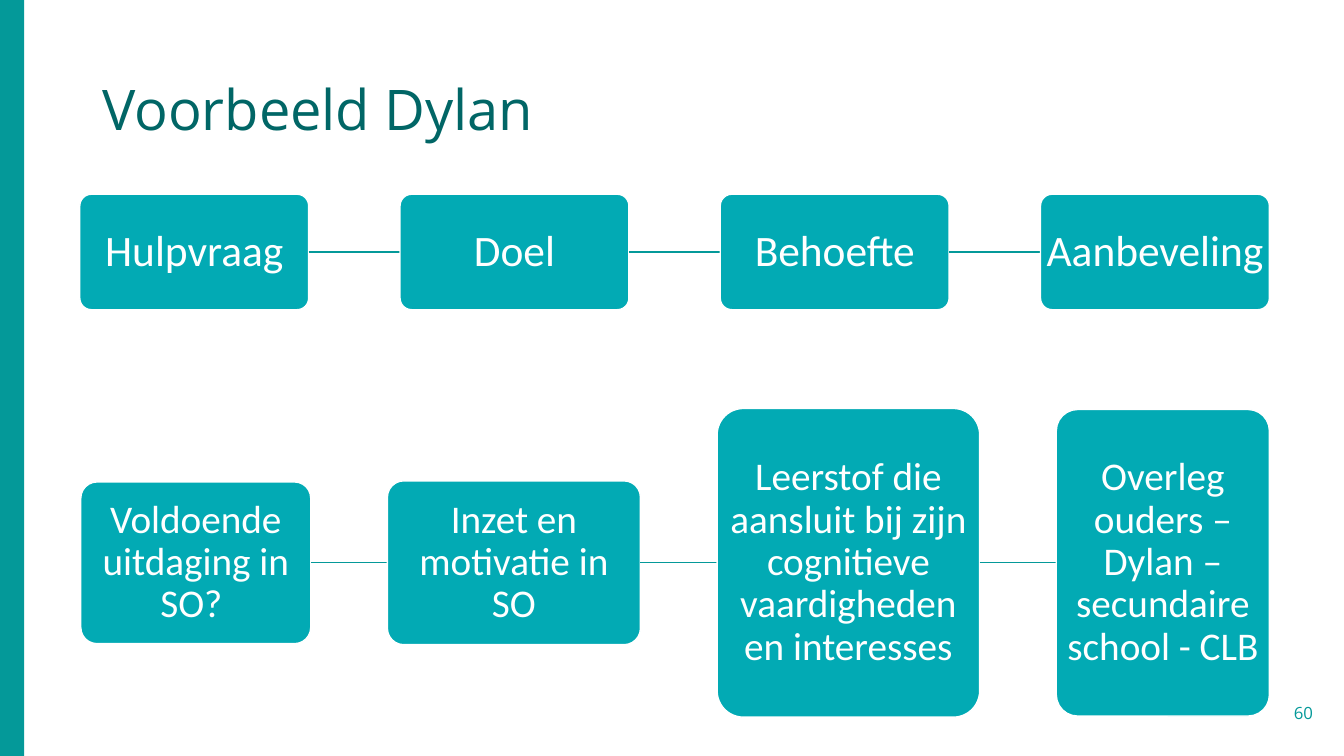
import pptx
import pptx.dml.color
import pptx.enum.shapes
import pptx.enum.text
import pptx.oxml
import pptx.oxml.ns
import pptx.util

PX = 9525
TEAL, DARK_TEAL, AQUA, WHITE = "049999", "016666", "02AAB4", "FFFFFF"
ALIGN = pptx.enum.text.PP_ALIGN
SHAPES = pptx.enum.shapes.MSO_SHAPE


def color(value):
    return pptx.dml.color.RGBColor.from_string(value)


def write(shape, text, size, font, shade, align, spacing=1.0):
    """Fill a shape with one vertically centred paragraph."""
    frame = shape.text_frame
    frame.word_wrap = True
    frame.vertical_anchor = pptx.enum.text.MSO_ANCHOR.MIDDLE
    para = frame.paragraphs[0]
    para.alignment = align
    para.line_spacing = spacing
    span = para.add_run()
    span.text = text
    formats = {"size": pptx.util.Pt(size), "name": font}
    for name, value in formats.items():
        setattr(span.font, name, value)
    span.font.color.rgb = color(shade)


deck = pptx.Presentation()
deck.slide_width = 1280 * PX
deck.slide_height = 720 * PX
page = deck.slides.add_slide(deck.slide_layouts[6])

side_bar = page.shapes.add_shape(SHAPES.RECTANGLE, 0, 0, 23 * PX, 720 * PX)
side_bar.shadow.inherit = False
side_bar.fill.solid()
side_bar.fill.fore_color.rgb = color(TEAL)
side_bar.line.fill.background()

title = page.shapes.add_textbox(88 * PX, 38 * PX, 1104 * PX, 139 * PX)
write(title, "Voorbeeld Dylan", 40, "Open Sans", DARK_TEAL, ALIGN.LEFT, 0.9)

page_number = page.shapes.add_textbox(1177 * PX, 660 * PX, 83 * PX, 38 * PX)
write(page_number, "60", 12, "Open Sans", TEAL, ALIGN.RIGHT)

# Each row: left edge, gap between boxes, centre line, text size, (text, width, height)
rows = [
    (76, 87, 240, 31, [
        ("Hulpvraag", 218, 110),
        ("Doel", 218, 110),
        ("Behoefte", 218, 110),
        ("Aanbeveling ", 218, 110),
    ]),
    (77, 73, 536, 28, [
        ("Voldoende uitdaging in SO? ", 219, 154),
        ("Inzet en motivatie in SO", 241, 156),
        ("Leerstof die aansluit bij zijn cognitieve vaardigheden en interesses", 250, 294),
        ("Overleg ouders – Dylan – secundaire school - CLB", 203, 292),
    ]),
]

for row_left, gap, middle, size, steps in rows:
    left = row_left
    for text, width, height in steps:
        if left > row_left:
            link = page.shapes.add_connector(
                pptx.enum.shapes.MSO_CONNECTOR.STRAIGHT,
                (left - gap) * PX, middle * PX, left * PX, middle * PX)
            link.line.color.rgb = color(TEAL)
            link.line.width = pptx.util.Pt(1)
            link._element.spPr.append(
                pptx.oxml.parse_xml("<a:effectLst %s/>" % pptx.oxml.ns.nsdecls("a")))

        box = page.shapes.add_shape(
            SHAPES.ROUNDED_RECTANGLE,
            left * PX, (middle - height // 2) * PX, width * PX, height * PX)
        box.adjustments[0] = 0.1
        box.shadow.inherit = False
        box.fill.solid()
        box.fill.fore_color.rgb = color(AQUA)
        box.line.color.rgb = color(WHITE)
        box.line.width = pptx.util.Pt(1)
        for side in ("left", "top", "right", "bottom"):
            setattr(box.text_frame, "margin_" + side, 2 * PX)
        write(box, text, size, "Calibri", WHITE, ALIGN.CENTER, 0.9)
        left += width + gap

deck.save("out.pptx")
